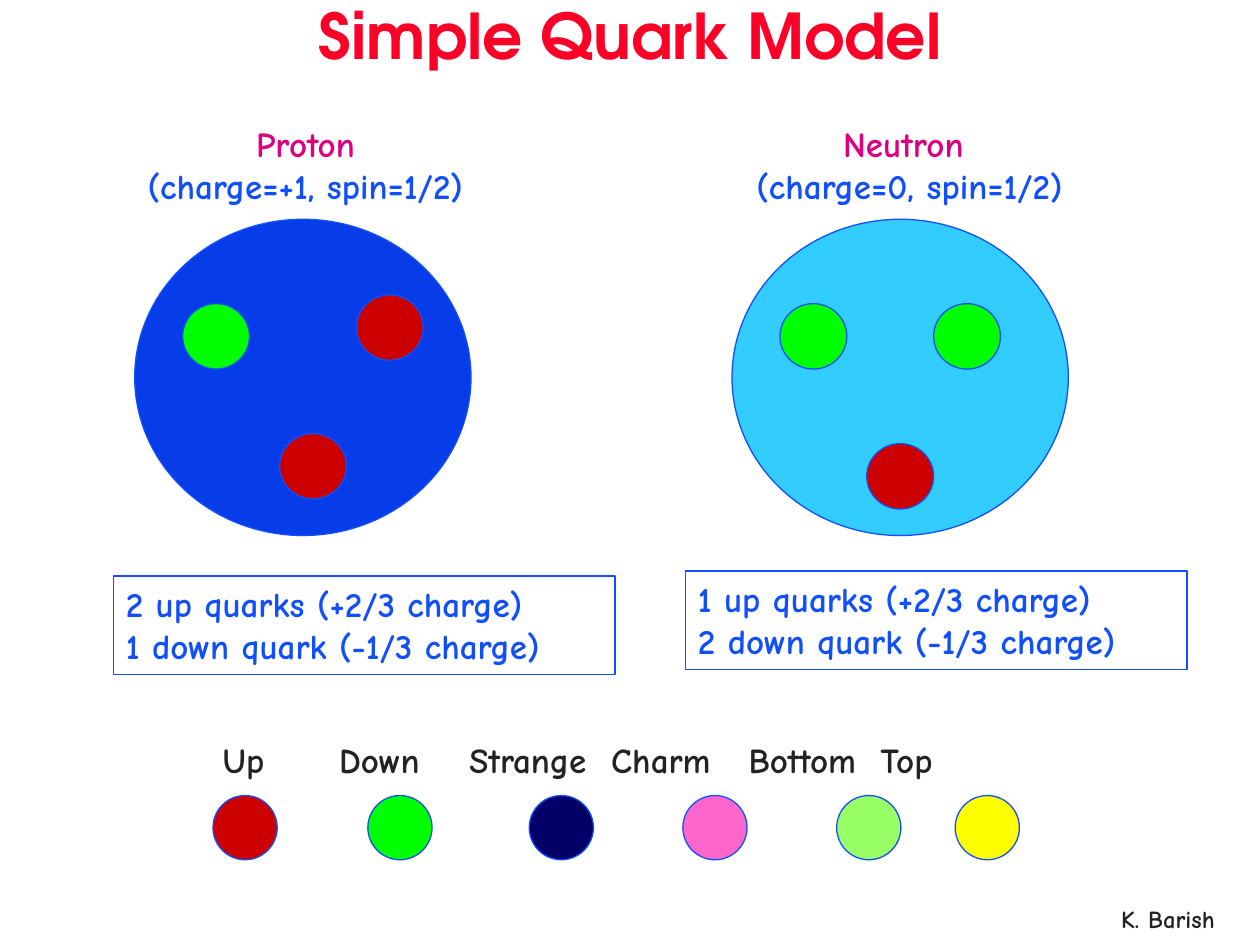
from dataclasses import dataclass

from lxml.etree import SubElement
from pptx import Presentation
from pptx.dml.color import RGBColor
from pptx.enum.shapes import MSO_SHAPE
from pptx.enum.text import MSO_ANCHOR, PP_ALIGN
from pptx.oxml.ns import qn
from pptx.util import Pt


@dataclass(frozen=True)
class Theme:
    title_font: str = "TeX Gyre Adventor"
    body_font: str = "Comic Neue"
    title_size: int = 36
    body_size: int = 20
    footer_size: int = 14
    title: str = "FC0128"
    heading: str = "DC0081"
    blue: str = "114FFB"
    ink: str = "232323"
    white: str = "FFFFFF"
    proton: str = "063DE8"
    neutron: str = "33CCFF"
    up: str = "CC0000"
    down: str = "00FF00"
    strange: str = "000066"
    charm: str = "FF66CC"
    bottom: str = "99FF66"
    top: str = "FFFF00"
    line_width: float = 0.75


class SlideBuilder:
    def __init__(self, prs, theme):
        self.t = theme
        self.s = prs.slides.add_slide(prs.slide_layouts[6])
        fill = self.s.background.fill
        fill.solid()
        fill.fore_color.rgb = RGBColor.from_string(theme.white)

    def outline(self, sp):
        sp.line.color.rgb = RGBColor.from_string(self.t.blue)
        sp.line.width = Pt(self.t.line_width)

    def circle(self, x, y, w, h, color):
        sp = self.s.shapes.add_shape(MSO_SHAPE.OVAL, Pt(x), Pt(y), Pt(w), Pt(h))
        sp.shadow.inherit = False
        sp.fill.solid()
        sp.fill.fore_color.rgb = RGBColor.from_string(color)
        self.outline(sp)

    def text(self, x, y, w, h, lines, font=None, size=None, boxed=False,
             tabs=(), frame=None, para=None):
        """Write (text, colour) lines; frame and para hold format values."""
        sp = self.s.shapes.add_textbox(Pt(x), Pt(y), Pt(w), Pt(h))
        if boxed:
            self.outline(sp)
        tf = sp.text_frame
        for name, value in {"word_wrap": True, **(frame or {})}.items():
            setattr(tf, name, value)
        for i, (line, color) in enumerate(lines):
            p = tf.add_paragraph() if i else tf.paragraphs[0]
            if tabs:
                self.tab_stops(p, tabs)
            for name, value in (para or {}).items():
                setattr(p, name, value)
            r = p.add_run()
            r.text = line
            style = {"name": font or self.t.body_font,
                     "size": Pt(size or self.t.body_size), "bold": True}
            for name, value in style.items():
                setattr(r.font, name, value)
            r.font.color.rgb = RGBColor.from_string(color)

    def tab_stops(self, p, stops):
        tab_list = SubElement(p._p.get_or_add_pPr(), qn("a:tabLst"))
        for stop in stops:
            SubElement(tab_list, qn("a:tab"), pos=str(Pt(stop)), algn="l")

    def nucleon(self, x, color, quarks):
        """Draw a nucleon with quarks placed relative to its corner."""
        y = 125.3
        self.circle(x, y, 192.2, 180.7, color)
        for dx, dy, quark in quarks:
            self.circle(x + dx, y + dy, 38.2, 37.4, quark)


def main():
    t = Theme()
    prs = Presentation()
    prs.slide_width, prs.slide_height = Pt(720), Pt(540)
    b = SlideBuilder(prs, t)
    centred = {"alignment": PP_ALIGN.CENTER}

    b.text(633.6, 514.8, 86.4, 22.3, [("K. Barish", t.ink)],
           size=t.footer_size, para={"line_spacing": Pt(15)})
    b.text(0, 0, 720, 44.6, [("Simple Quark Model", t.title)],
           font=t.title_font, size=t.title_size,
           frame={"vertical_anchor": MSO_ANCHOR.BOTTOM}, para=centred)

    b.nucleon(77, t.proton, [(82.8, 122.4, t.up), (126.7, 43.2, t.up),
                             (27.4, 48.2, t.down)])
    b.nucleon(418.3, t.neutron, [(77, 128.2, t.up), (27.4, 48.2, t.down),
                                 (115.2, 48.2, t.down)])

    for x, w, name, facts in ((59, 231.1, "Proton", "(charge=+1, spin=1/2)"),
                              (402.5, 227.5, "Neutron", " (charge=0, spin=1/2)")):
        b.text(x, 66.2, w, 55.4, [(name, t.heading), (facts, t.blue)],
               frame={"word_wrap": False}, para=centred)

    for x, y, ups, downs in ((64.8, 329.2, 2, 1), (391.7, 326.2, 1, 2)):
        b.text(x, y, 286.6, 56.2,
               [(f"{ups} up quarks (+2/3 charge)", t.blue),
                (f"{downs} down quark (-1/3 charge)", t.blue)], boxed=True)

    flavours = (("Up", 121.7, t.up), ("Down", 210.2, t.down),
                ("Strange", 302.4, t.strange), ("Charm", 390.2, t.charm),
                ("Bottom", 478.1, t.bottom), ("Top", 545.8, t.top))
    for name, x, color in flavours:
        b.circle(x, 454.6, 36.7, 36.7, color)
    b.text(120.2, 418.3, 475.2, 31,
           [("\t".join(name for name, x, color in flavours), t.ink)],
           tabs=(66.5, 141, 222, 300.5, 376))

    prs.save("out.pptx")


if __name__ == "__main__":
    main()
